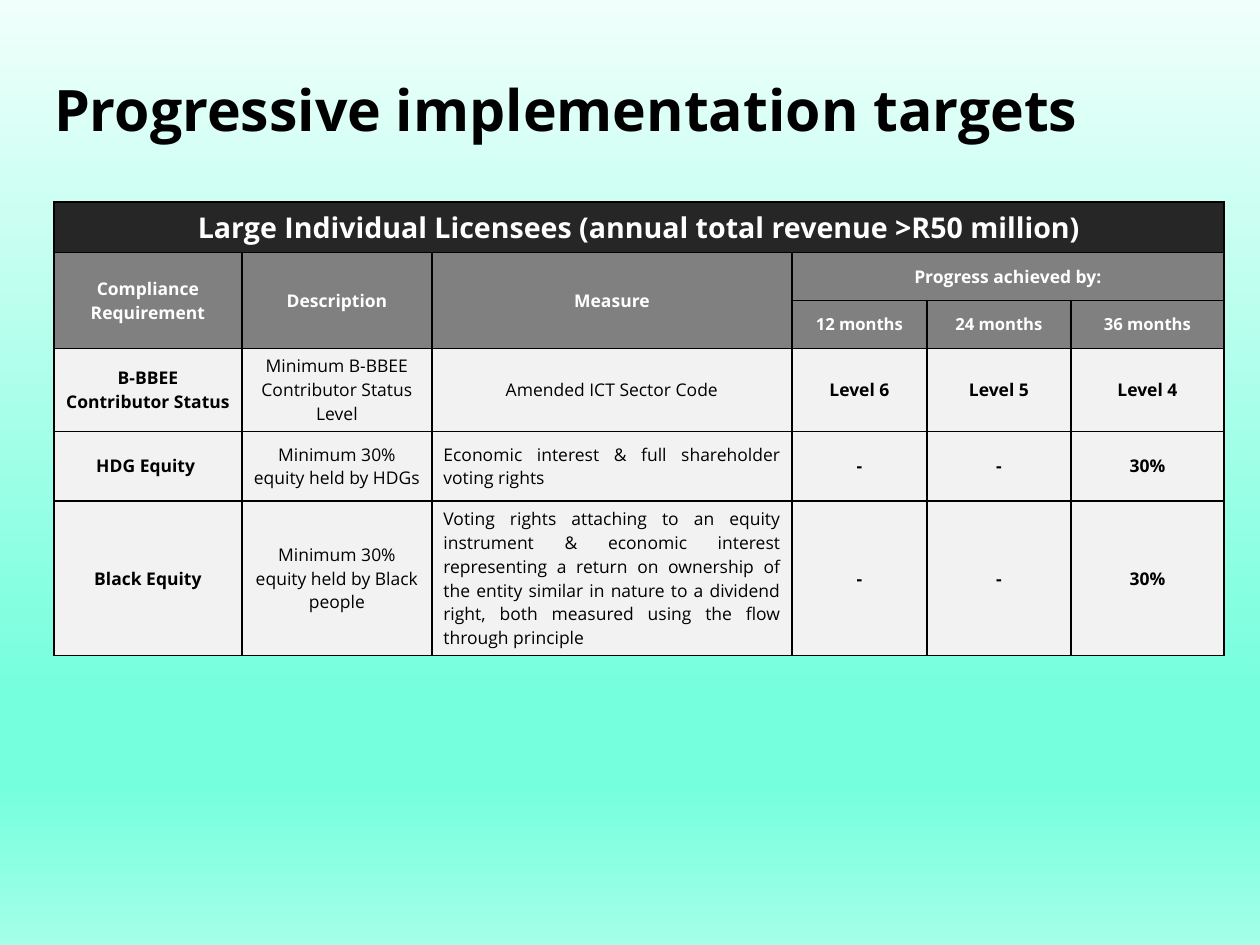
from lxml import etree
from pptx import Presentation
from pptx.dml.color import RGBColor
from pptx.enum.text import MSO_ANCHOR, PP_ALIGN
from pptx.oxml.ns import qn
from pptx.util import Pt

PX = 8000  # EMU per px, the slide is 1260 by 945 px
FONT = "Open Sans"
CENTER, JUSTIFY = PP_ALIGN.CENTER, PP_ALIGN.JUSTIFY
MIDDLE = MSO_ANCHOR.MIDDLE

BACKGROUND = [(0, "F0FFFB"), (74, "75FFDD"), (83, "75FFDD"), (100, "A3FFE8")]
COLUMNS = [188, 190, 360, 135, 144, 153]
ROWS = [47, 48, 48, 77, 70, 142]
MERGES = [(0, 0, 0, 5), (1, 0, 2, 0), (1, 1, 2, 1), (1, 2, 2, 2), (1, 3, 1, 5)]
HEADINGS = [
    ["Large Individual Licensees (annual total revenue >R50 million)"] + [""] * 5,
    ["Compliance Requirement", "Description", "Measure", "Progress achieved by:", "", ""],
    ["", "", "", "12 months", "24 months", "36 months"],
]
HEADING_STYLES = [(18, "262626"), (11, "808080"), (10.5, "808080")]  # size, fill
TARGETS = [
    ["B-BBEE Contributor Status", "Minimum B-BBEE Contributor Status Level",
     "Amended ICT Sector Code", "Level 6", "Level 5", "Level 4"],
    ["HDG Equity ", "Minimum 30% equity held by HDGs",
     "Economic interest & full shareholder voting rights", "-", "-", "30%"],
    ["Black Equity", "Minimum 30% equity held by Black people",
     "Voting rights attaching to an equity instrument & economic interest "
     "representing a return on ownership of the entity similar in nature to a "
     "dividend right, both measured using the flow through principle",
     "-", "-", "30%"],
]


def rgb(color):
    return RGBColor.from_string(color)


def set_text(tf, text, size, color, bold, align):
    tf.text = text
    p = tf.paragraphs[0]
    p.alignment = align
    p.font.name = FONT
    p.font.size = Pt(size)
    p.font.bold = bold
    p.font.color.rgb = rgb(color)
    return p


def set_background(slide, stops):
    fill = slide.background.fill
    fill.gradient()
    fill.gradient_angle = 270
    stop_list = next(slide.element.iter(qn("a:gsLst")))
    for stop in list(stop_list):
        stop_list.remove(stop)
    for position, color in stops:
        stop = etree.SubElement(stop_list, qn("a:gs"), pos=str(position * 1000))
        etree.SubElement(stop, qn("a:srgbClr"), val=color)


def add_title(slide, x, y, w, h):
    sp = slide.shapes.title
    sp.left, sp.top, sp.width, sp.height = (v * PX for v in (x, y, w, h))
    tf = sp.text_frame
    tf.margin_left = tf.margin_right = tf.margin_bottom = 0
    tf.margin_top = 5 * PX
    tf.vertical_anchor = MIDDLE
    tf.word_wrap = True
    p = set_text(tf, "Progressive implementation targets", 36, "000000", True, JUSTIFY)
    p.line_spacing = 0.93


def format_cell(cell, fill):
    cell.vertical_anchor = MIDDLE
    cell_props = cell._tc.get_or_add_tcPr()
    for side in ("a:lnL", "a:lnR", "a:lnT", "a:lnB"):
        line = etree.SubElement(cell_props, qn(side), w=str(Pt(1)))
        solid = etree.SubElement(line, qn("a:solidFill"))
        etree.SubElement(solid, qn("a:srgbClr"), val="000000")
    cell.fill.solid()
    cell.fill.fore_color.rgb = rgb(fill)


def add_targets_table(slide, x, y):
    table = slide.shapes.add_table(
        len(ROWS), len(COLUMNS), x * PX, y * PX, sum(COLUMNS) * PX, sum(ROWS) * PX).table
    table.first_row = table.horz_banding = False
    for column, width in zip(table.columns, COLUMNS):
        column.width = width * PX
    for row, height in zip(table.rows, ROWS):
        row.height = height * PX
    for top, left, bottom, right in MERGES:
        table.cell(top, left).merge(table.cell(bottom, right))

    # Heading rows
    for r, (texts, (size, fill)) in enumerate(zip(HEADINGS, HEADING_STYLES)):
        for c, text in enumerate(texts):
            cell = table.cell(r, c)
            format_cell(cell, fill)
            if text:
                set_text(cell.text_frame, text, size, "FFFFFF", True, CENTER)

    # Target rows: description and measure are plain, long measures justified
    for r, texts in enumerate(TARGETS, len(HEADINGS)):
        for c, text in enumerate(texts):
            cell = table.cell(r, c)
            format_cell(cell, "F2F2F2")
            align = JUSTIFY if c == 2 and r > len(HEADINGS) else CENTER
            set_text(cell.text_frame, text, 11, "000000", c not in (1, 2), align)


def main():
    prs = Presentation()
    prs.slide_width, prs.slide_height = 1260 * PX, 945 * PX
    slide = prs.slides.add_slide(prs.slide_layouts[5])
    set_background(slide, BACKGROUND)
    add_targets_table(slide, 54, 202)
    add_title(slide, 54, 31, 1134, 158)
    prs.save("out.pptx")


if __name__ == "__main__":
    main()
